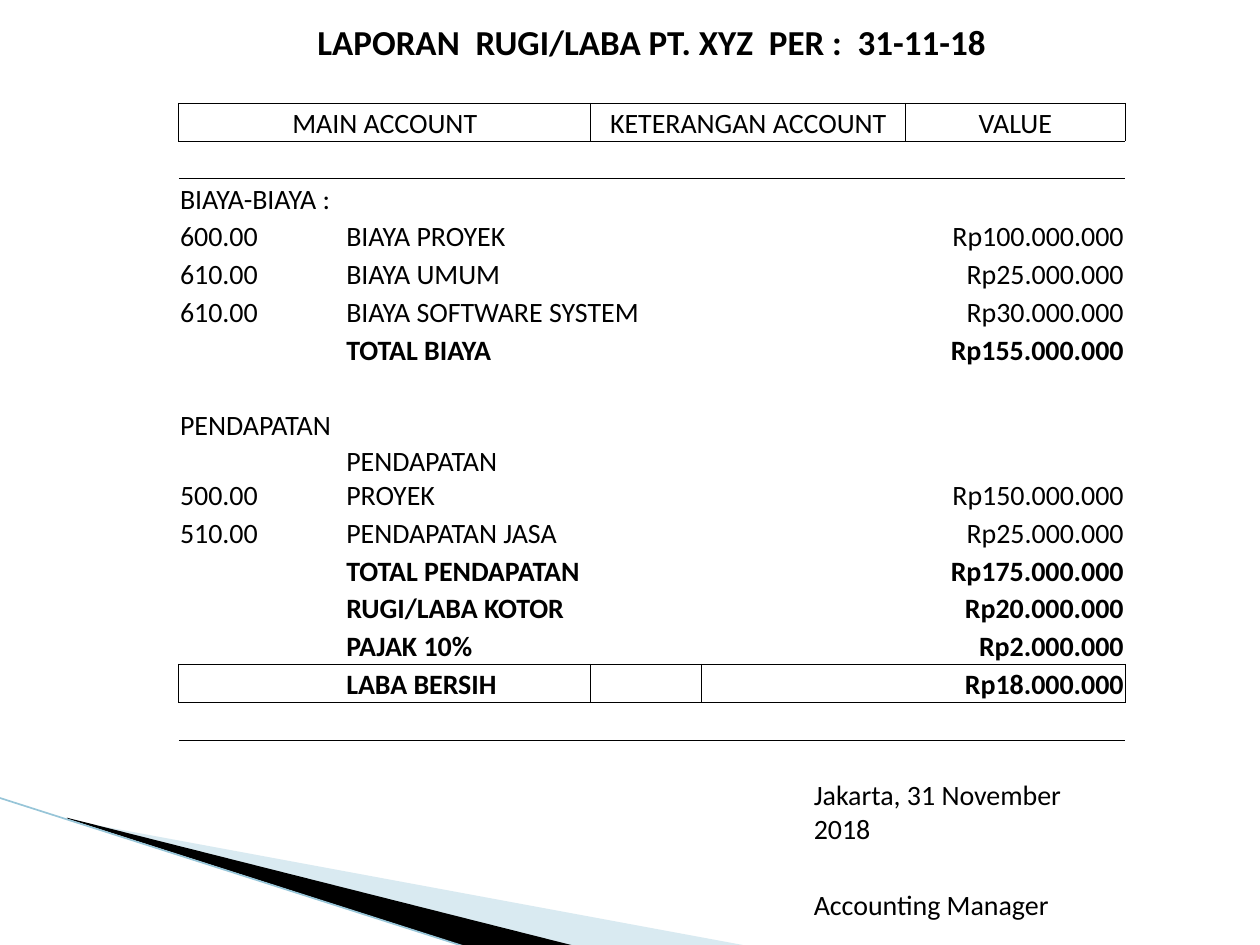
from collections import defaultdict
from dataclasses import dataclass

from lxml.etree import SubElement
from pptx import Presentation
from pptx.dml.color import RGBColor
from pptx.enum.shapes import MSO_CONNECTOR
from pptx.enum.text import MSO_ANCHOR, PP_ALIGN
from pptx.oxml import parse_xml
from pptx.oxml.ns import nsdecls, qn
from pptx.util import Pt


@dataclass(frozen=True)
class Theme:
    font: str = "Calibri"
    ink: str = "000000"
    pale_blue: str = "A0CBDC"
    edge_blue: str = "97C5D8"
    title_size: float = 20
    text_size: float = 16
    rule_width: float = 0.5
    edge_width: float = 0.95
    inset: float = 0.7
    plain_table: str = "{2D5ABB26-0587-4C30-8999-92F81FD0307C}"


COLUMN_WIDTHS = [95, 140.4, 63.4, 63.4, 53.3, 125.2]
ROW_COUNT, TITLE_HEIGHT, ROW_HEIGHT = 22, 25.2, 21.6
LAST_COLUMN = len(COLUMN_WIDTHS) - 1
HEADER_ROW, NET_ROW = 2, 16

# Row: account code, account name, amount
ACCOUNTS = {
    5: ("600.00", "BIAYA PROYEK", "Rp100.000.000"),
    6: ("610.00", "BIAYA UMUM", "Rp25.000.000"),
    7: ("610.00", "BIAYA SOFTWARE SYSTEM", "Rp30.000.000"),
    8: ("", "TOTAL BIAYA", "Rp155.000.000"),
    11: ("500.00", "PENDAPATAN PROYEK", "Rp150.000.000"),
    12: ("510.00", "PENDAPATAN JASA", "Rp25.000.000"),
    13: ("", "TOTAL PENDAPATAN", "Rp175.000.000"),
    14: ("", "RUGI/LABA KOTOR", "Rp20.000.000"),
    15: ("", "PAJAK 10%", "Rp2.000.000"),
    NET_ROW: ("", "LABA BERSIH", "Rp18.000.000"),
}
SECTIONS = {4: "BIAYA-BIAYA :", 10: "PENDAPATAN"}
HEADINGS = [("MAIN ACCOUNT", 0, 1), ("KETERANGAN ACCOUNT", 2, 4), ("VALUE", 5, 5)]
SIGNATURE = {19: "Jakarta, 31 November 2018", 21: "Accounting Manager"}


def write(cell, text, *, theme, size=None, bold=False, align=PP_ALIGN.LEFT):
    para = cell.text_frame.paragraphs[0]
    para.alignment = align
    span = para.add_run()
    span.text = text
    span.font.name = theme.font
    span.font.size = Pt(size or theme.text_size)
    span.font.bold = bold
    span.font.color.rgb = RGBColor.from_string(theme.ink)


class ReportPage:
    def __init__(self, deck, theme):
        self.theme = theme
        self.page = deck.slides.add_slide(deck.slide_layouts[6])

    def wedge(self, points, color, opacity=100):
        corners = [(Pt(x), Pt(y)) for x, y in points]
        builder = self.page.shapes.build_freeform(*corners[0])
        builder.add_line_segments(corners[1:], close=True)
        shape = builder.convert_to_shape()
        shape.shadow.inherit = False
        shape.line.fill.background()
        shape.fill.solid()
        shape.fill.fore_color.rgb = RGBColor.from_string(color)
        if opacity < 100:
            tint = shape.fill._xPr.find(qn("a:solidFill"))[0]
            SubElement(tint, qn("a:alpha"), val=str(opacity * 1000))

    def line(self, start, end):
        ends = [Pt(value) for value in (*start, *end)]
        edge = self.page.shapes.add_connector(MSO_CONNECTOR.STRAIGHT, *ends)
        edge.line.width = Pt(self.theme.edge_width)
        edge.line.color.rgb = RGBColor.from_string(self.theme.edge_blue)
        SubElement(edge._element.spPr, qn("a:effectLst"))

    def table(self, left, top):
        height = TITLE_HEIGHT + (ROW_COUNT - 1) * ROW_HEIGHT
        frame = self.page.shapes.add_table(
            ROW_COUNT, len(COLUMN_WIDTHS), Pt(left), Pt(top),
            Pt(sum(COLUMN_WIDTHS)), Pt(height))
        table = frame.table
        table.first_row = table.horz_banding = False
        table._tbl.tblPr.find(qn("a:tableStyleId")).text = self.theme.plain_table
        for column, width in zip(table.columns, COLUMN_WIDTHS):
            column.width = Pt(width)
        for index, row in enumerate(table.rows):
            row.height = Pt(ROW_HEIGHT if index else TITLE_HEIGHT)
        for cell in table.iter_cells():
            cell.fill.background()
            cell.vertical_anchor = MSO_ANCHOR.BOTTOM
            cell.margin_left = cell.margin_right = cell.margin_top = Pt(self.theme.inset)
            cell.margin_bottom = 0
            # Empty cells keep the text size, so their rows do not grow
            SubElement(cell.text_frame.paragraphs[0]._p, qn("a:endParaRPr"),
                       sz=str(self.theme.text_size * 100))
        return table

    def rules(self, table, boxes):
        """Outline each (row, first column, last column) box."""
        sides = defaultdict(set)
        for row, first, last in boxes:
            for column in range(first, last + 1):
                sides[row, column] |= {"T", "B"}
                sides[row - 1, column].add("B")
                sides[row + 1, column].add("T")
            sides[row, first].add("L")
            sides[row, last].add("R")
            if table.cell(row, first).is_merge_origin:
                sides[row, first].add("R")
        for (row, column), names in sides.items():
            properties = table.cell(row, column)._tc.get_or_add_tcPr()
            ordered = [side for side in "LRTB" if side in names]
            for position, side in enumerate(ordered):
                properties.insert(position, parse_xml(
                    f'<a:ln{side} {nsdecls("a")} w="{Pt(self.theme.rule_width)}">'
                    f'<a:solidFill><a:srgbClr val="{self.theme.ink}"/></a:solidFill>'
                    f'</a:ln{side}>'))


def fill_report(table, theme):
    def put(row, first, text, last=None, **style):
        cell = table.cell(row, first)
        if last is not None and last > first:
            cell.merge(table.cell(row, last))
        write(cell, text, theme=theme, **style)

    put(0, 0, "LAPORAN  RUGI/LABA PT. XYZ  PER :  31-11-18", LAST_COLUMN,
        size=theme.title_size, bold=True, align=PP_ALIGN.CENTER)
    for text, first, last in HEADINGS:
        put(HEADER_ROW, first, text, last, align=PP_ALIGN.CENTER)
    for row, text in SECTIONS.items():
        put(row, 0, text)
    for row, (code, name, amount) in ACCOUNTS.items():
        is_total = not code
        if code:
            put(row, 0, code)
        name_end = 2 if name == "BIAYA SOFTWARE SYSTEM" else None
        put(row, 1, name, name_end, bold=is_total)
        put(row, LAST_COLUMN, amount, bold=is_total, align=PP_ALIGN.RIGHT)
    for row, text in SIGNATURE.items():
        put(row, 4, text, LAST_COLUMN)


def main():
    theme = Theme()
    deck = Presentation()
    deck.slide_width, deck.slide_height = Pt(720), Pt(540)
    report = ReportPage(deck, theme)

    # Corner decoration
    report.wedge([(39.6, 468.7), (428.4, 540.7), (328.3, 540.7), (39.6, 468)],
                 theme.pale_blue, opacity=40)
    report.wedge([(38.2, 467.3), (329, 540.7), (267.8, 541.4), (38.9, 468)], theme.ink)
    report.line((-0.7, 455.8), (267.1, 541.4))

    # Profit and loss report
    table = report.table(102.2, 12.2)
    fill_report(table, theme)
    header_boxes = [(HEADER_ROW, first, last) for _, first, last in HEADINGS]
    report.rules(table, header_boxes + [(NET_ROW, 0, 1), (NET_ROW, 2, LAST_COLUMN)])

    deck.save("out.pptx")


if __name__ == "__main__":
    main()
